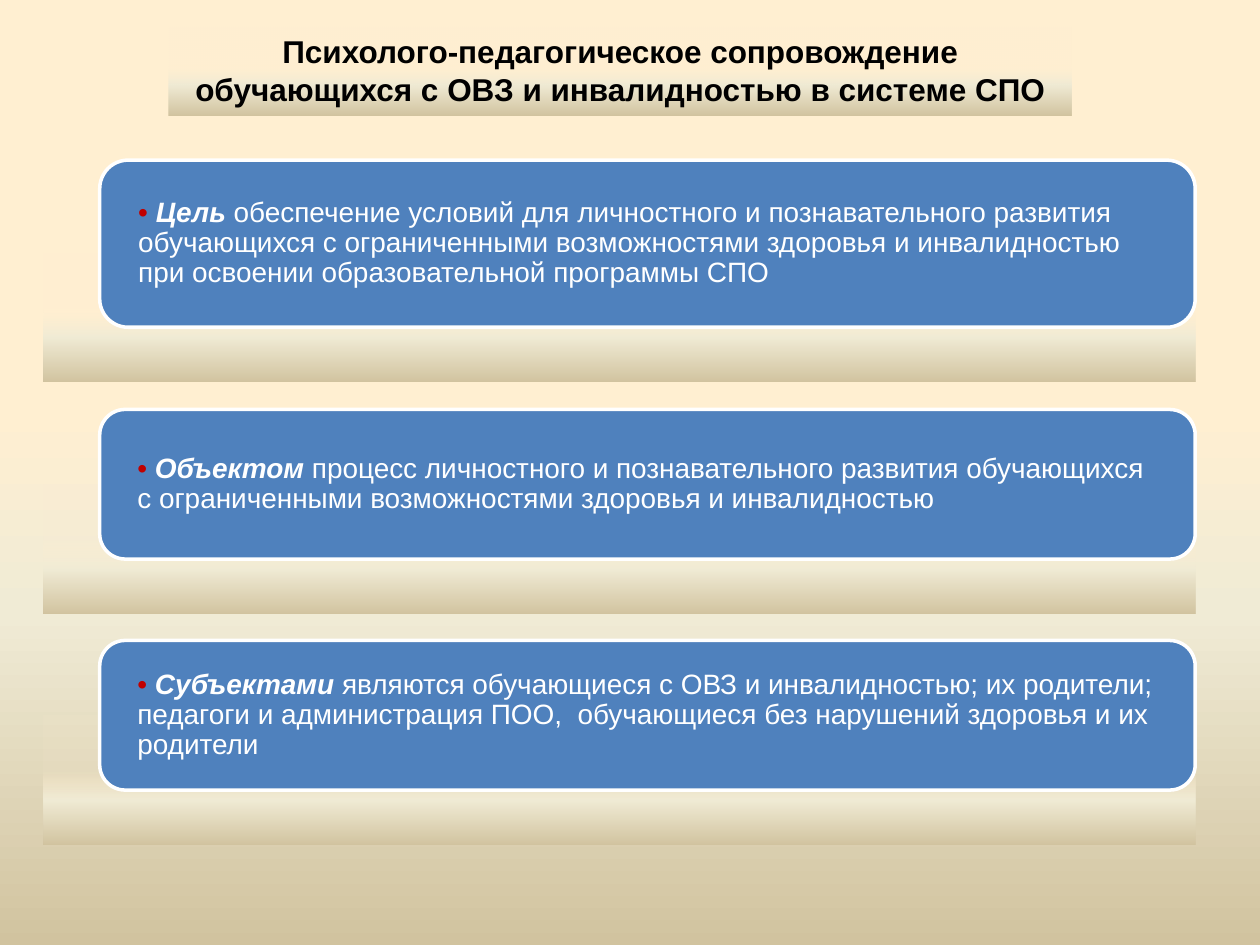
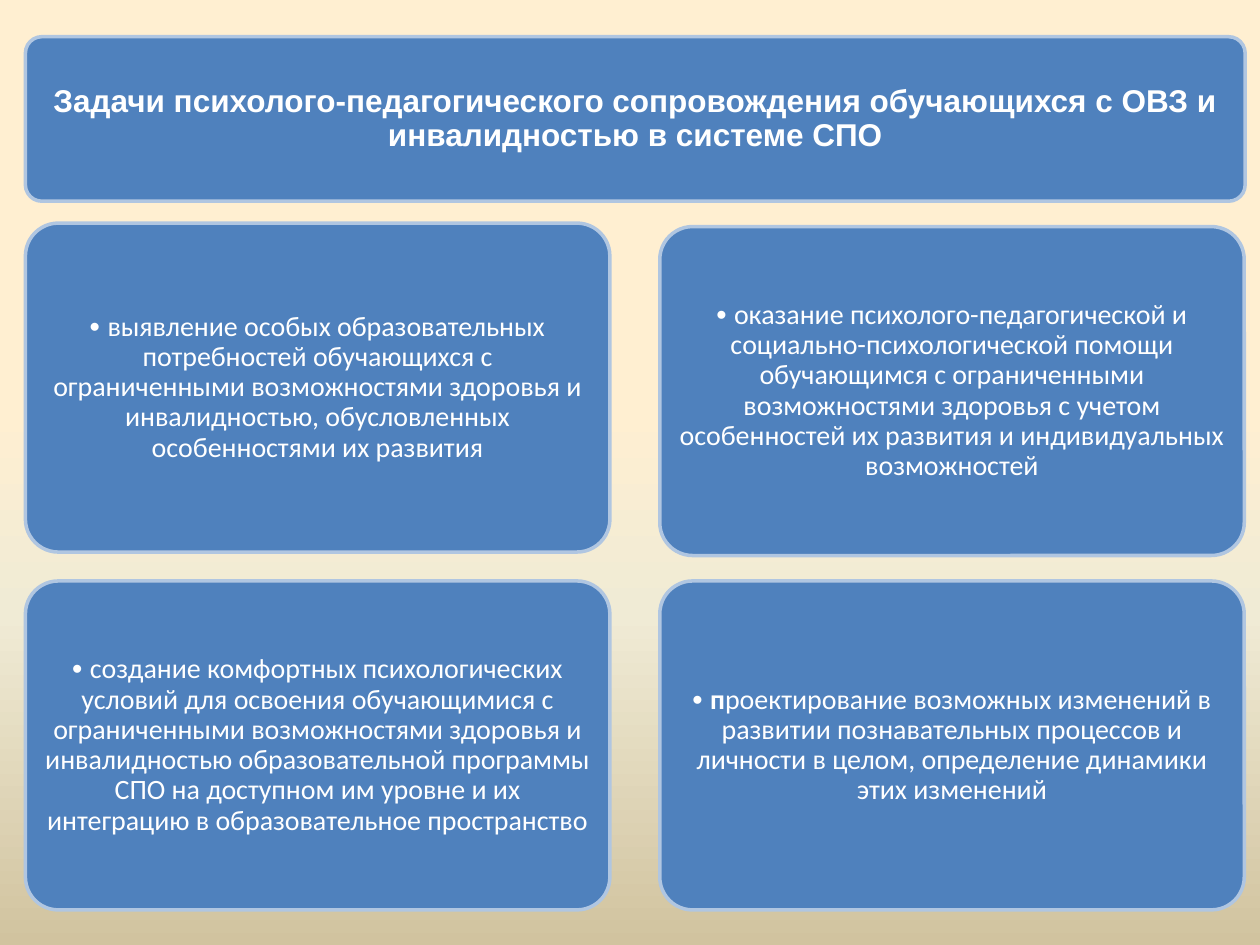
from lxml import etree
from pptx import Presentation
from pptx.dml.color import RGBColor
from pptx.enum.shapes import MSO_SHAPE
from pptx.enum.text import MSO_ANCHOR, PP_ALIGN
from pptx.oxml.ns import nsdecls, qn
from pptx.util import Pt

RECT, ROUND = MSO_SHAPE.RECTANGLE, MSO_SHAPE.ROUNDED_RECTANGLE
TOP, MIDDLE = MSO_ANCHOR.TOP, MSO_ANCHOR.MIDDLE
LEFT, CENTER = PP_ALIGN.LEFT, PP_ALIGN.CENTER

BLUE, PALE_BLUE, WHITE, BLACK, RED = "4F81BD", "B0C6E1", "FFFFFF", "000000", "C00000"
SAND = [(43, "FFEFD1"), (65, "F0EBD5"), (100, "D1C39F")]
BULLET = "• "


def rgb(value):
    return RGBColor.from_string(value)


def run(text, font="Arial", size=16, color=WHITE, bold=False, italic=False):
    """Describe one run of text as (text, format)."""
    return text, dict(font=font, size=size, color=color, bold=bold, italic=italic)


def sand_gradient(fill, element, first_alpha=100):
    """Fill with the vertical sand gradient; first_alpha is the opacity of its top stop."""
    fill.solid()
    stops = ""
    for i, (pos, color) in enumerate(SAND):
        alpha = 100 if i else first_alpha
        stops += (f'<a:gs pos="{pos * 1000}"><a:srgbClr val="{color}">'
                  f'<a:alpha val="{alpha * 1000}"/></a:srgbClr></a:gs>')
    grad = etree.fromstring(f'<a:gradFill {nsdecls("a")} rotWithShape="1"><a:gsLst>{stops}</a:gsLst>'
                            '<a:lin ang="5400000" scaled="0"/></a:gradFill>')
    solid = next(element.iter(qn("a:solidFill")))
    solid.getparent().replace(solid, grad)


class Deck:
    def __init__(self):
        self.prs = Presentation()
        self.prs.slide_width, self.prs.slide_height = Pt(720), Pt(540)
        master = self.prs.slide_master
        sand_gradient(master.background.fill, master.element)
        self.slide = None

    def new_slide(self):
        self.slide = self.prs.slides.add_slide(self.prs.slide_layouts[6])

    def shape(self, kind, x, y, w, h):
        s = self.slide.shapes.add_shape(kind, Pt(x), Pt(y), Pt(w), Pt(h))
        s.shadow.inherit = False
        return s

    def band(self, x, y, w, h):
        s = self.shape(RECT, x, y, w, h)
        sand_gradient(s.fill, s.element, first_alpha=9)
        s.line.fill.background()
        return s

    def panel(self, x, y, w, h, line, radius):
        s = self.shape(ROUND, x, y, w, h)
        s.adjustments[0] = radius
        s.fill.solid()
        s.fill.fore_color.rgb = rgb(BLUE)
        s.line.color.rgb = rgb(line)
        s.line.width = Pt(2)
        return s

    def text(self, s, *runs, align=CENTER, anchor=MIDDLE, margins=(5, 5), spacing=0.9):
        """Write runs into s; margins are (left and right, top and bottom)."""
        tf = s.text_frame
        tf.word_wrap = True
        tf.vertical_anchor = anchor
        tf.margin_left = tf.margin_right = Pt(margins[0])
        tf.margin_top = tf.margin_bottom = Pt(margins[1])
        p = tf.paragraphs[0]
        p.alignment = align
        p.line_spacing = spacing
        for content, style in runs:
            r = p.add_run()
            r.text = content
            r.font.name = style["font"]
            r.font.size = Pt(style["size"])
            r.font.bold = style["bold"]
            r.font.italic = style["italic"]
            r.font.color.rgb = rgb(style["color"])


def build_concept(deck):
    deck.new_slide()
    title = deck.band(96.5, 15, 516, 51)
    deck.text(title, run("Психолого-педагогическое сопровождение обучающихся с ОВЗ и инвалидностью "
                         "в системе СПО", size=18, color=BLACK, bold=True),
              anchor=TOP, margins=(7.2, 3.6), spacing=1.0)
    concepts = [
        (91.5, 95.5, "Цель ",
         "обеспечение условий для личностного и познавательного развития обучающихся с "
         "ограниченными возможностями здоровья и инвалидностью при освоении "
         "образовательной программы СПО"),
        (234, 85.5, "Объектом ",
         "процесс личностного и познавательного развития обучающихся с ограниченными "
         "возможностями здоровья и инвалидностью"),
        (366, 85.5, "Субъектами ",
         "являются обучающиеся с ОВЗ и инвалидностью; их родители; педагоги и "
         "администрация ПОО,  обучающиеся без нарушений здоровья и их родители"),
    ]
    for y, h, term, meaning in concepts:
        deck.band(25, y + h - 42.5, 658, 73.5)
        panel = deck.panel(57, y, 626, h, WHITE, 0.17)
        deck.text(panel, run(BULLET, color=RED), run(term, bold=True, italic=True), run(meaning),
                  align=LEFT, margins=(17.25, 0))


def build_tasks(deck):
    deck.new_slide()
    header = deck.panel(14.5, 21, 697, 94, PALE_BLUE, 0.1)
    deck.text(header, run("Задачи психолого-педагогического сопровождения обучающихся с ОВЗ и "
                          "инвалидностью в системе СПО", size=18, bold=True))
    left, right = 14.5, 377
    tasks = [
        (left, 127.5, "",
         "выявление особых образовательных потребностей обучающихся с ограниченными "
         "возможностями здоровья и инвалидностью, обусловленных особенностями их развития"),
        (left, 332, "",
         "создание комфортных психологических условий для освоения обучающимися с "
         "ограниченными возможностями здоровья и инвалидностью образовательной программы "
         "СПО на доступном им уровне и их интеграцию в образовательное пространство"),
        (right, 129.5, "",
         "оказание психолого-педагогической и социально-психологической помощи "
         "обучающимся с ограниченными возможностями здоровья с учетом особенностей их "
         "развития и индивидуальных возможностей"),
        (right, 332, "п",
         "роектирование возможных изменений в развитии познавательных процессов и "
         "личности в целом, определение динамики этих изменений"),
    ]
    for x, y, initial, task in tasks:
        runs = [run(BULLET, bold=True), run(task, font="Calibri")]
        if initial:
            runs.insert(1, run(initial, font="Calibri", bold=True))
        deck.text(deck.panel(x, y, 334, 188, PALE_BLUE, 0.1), *runs)


def main():
    deck = Deck()
    build_concept(deck)
    build_tasks(deck)
    deck.prs.save("out.pptx")


if __name__ == "__main__":
    main()
